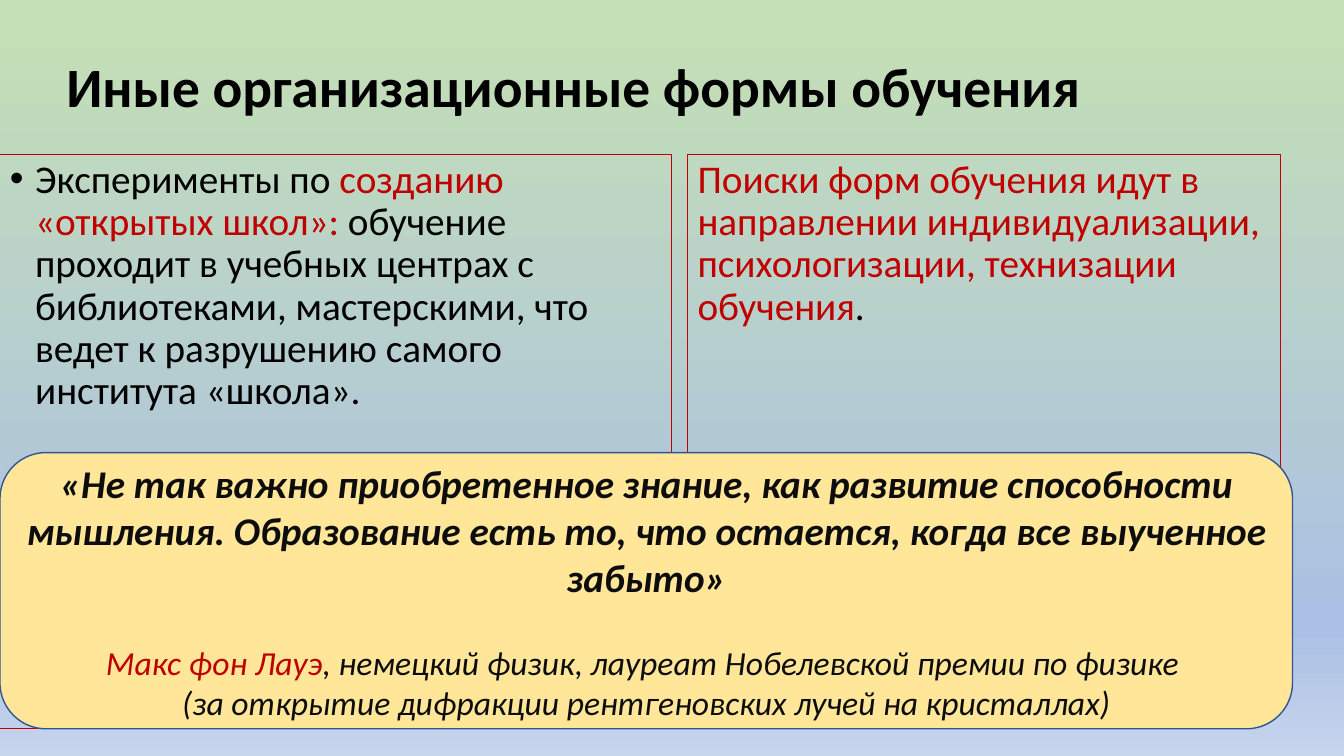
from dataclasses import dataclass

from lxml.etree import SubElement
from pptx import Presentation
from pptx.dml.color import RGBColor
from pptx.enum.shapes import MSO_SHAPE
from pptx.enum.text import MSO_ANCHOR, PP_ALIGN
from pptx.oxml.ns import qn
from pptx.util import Inches, Pt

COLORS = {
    "black": "000000",
    "ink": "0D0D0D",
    "red": "C00000",
    "yellow": "FFE699",
    "blue": "325491",
    "sky_top": "C5E0B4",
    "sky_low": "ABC0E4",
    "sky_bottom": "C7D5ED",
}
SKY = ((0, "sky_top"), (83, "sky_low"), (100, "sky_bottom"))
FONT = "Calibri"
SLIDE_WIDTH, SLIDE_HEIGHT = Inches(13.33), Inches(7.5)


@dataclass(frozen=True)
class Run:
    text: str
    color: str


@dataclass(frozen=True)
class Line:
    runs: tuple[Run, ...]
    size: float
    bold: bool = False
    italic: bool = False
    bullet: bool = False
    align: PP_ALIGN = PP_ALIGN.LEFT
    spacing: float = 0.9
    before: float = 0


@dataclass(frozen=True)
class Panel:
    left: float
    top: float
    width: float
    height: float
    lines: tuple[Line, ...]
    preset: MSO_SHAPE = MSO_SHAPE.RECTANGLE
    fill: str | None = None
    border: str | None = None
    border_width: float = 0.75
    anchor: MSO_ANCHOR = MSO_ANCHOR.TOP


def quote_line(*runs: Run, size: float = 24, bold: bool = False, before: float = 0) -> Line:
    return Line(runs, size, bold, True, align=PP_ALIGN.CENTER, spacing=1, before=before)


PANELS = (
    Panel(4.2, 7.47, 86.12, 8.67,
          (Line((Run("Иные организационные формы обучения", "black"),), 39.6, bold=True),),
          anchor=MSO_ANCHOR.MIDDLE),
    Panel(0, 20.4, 49.96, 76,
          (Line((Run("Эксперименты по ", "black"),
                 Run("созданию «открытых школ»: ", "red"),
                 Run("обучение проходит в учебных центрах с библиотеками, мастерскими, "
                     "что ведет к разрушению самого института «школа».", "black")),
                28, bullet=True),),
          border="red"),
    Panel(51.16, 20.4, 44.11, 73.2,
          (Line((Run("Поиски форм обучения идут в направлении индивидуализации, "
                     "психологизации, технизации обучения", "red"),
                 Run(".", "black")), 28),),
          border="red"),
    Panel(0, 59.87, 96.17, 36.53,
          (quote_line(Run("«Не так важно приобретенное знание, как развитие способности мышления. "
                          "Образование есть то, что остается, когда все выученное забыто»", "ink"),
                      size=28, bold=True),
           quote_line(Run("Макс фон Лауэ", "red"),
                      Run(", немецкий физик, лауреат Нобелевской премии по физике ", "ink"),
                      before=29.3),
           quote_line(Run("(за открытие дифракции рентгеновских лучей на кристаллах)", "ink"))),
          MSO_SHAPE.ROUNDED_RECTANGLE, "yellow", "blue", 1, MSO_ANCHOR.MIDDLE),
)


def rgb(name: str) -> RGBColor:
    return RGBColor.from_string(COLORS[name])


def paint_background(slide) -> None:
    fill = slide.background.fill
    fill.gradient()
    fill.gradient_angle = 270
    stops = next(slide.background._cSld.iter(qn("a:gsLst")))
    for stop in list(stops):
        stops.remove(stop)
    for percent, color in SKY:
        stop = SubElement(stops, qn("a:gs"), pos=str(percent * 1000))
        SubElement(stop, qn("a:srgbClr"), val=COLORS[color])


def write_line(paragraph, line: Line) -> None:
    paragraph.alignment = line.align
    paragraph.line_spacing = line.spacing
    paragraph.space_before = Pt(line.before)
    font = paragraph.font
    font.name, font.size = FONT, Pt(line.size)
    font.bold, font.italic = line.bold, line.italic
    if line.bullet:
        properties = paragraph._p.get_or_add_pPr()
        properties.set("marL", str(Inches(0.25)))
        properties.set("indent", str(-Inches(0.25)))
        bullet_font = properties.makeelement(qn("a:buFont"), {"typeface": "Arial"})
        bullet = properties.makeelement(qn("a:buChar"), {"char": "•"})
        default_run = properties.find(qn("a:defRPr"))
        default_run.addprevious(bullet_font)
        default_run.addprevious(bullet)
    for part in line.runs:
        run = paragraph.add_run()
        run.text = part.text
        run.font.color.rgb = rgb(part.color)


def draw_panel(slide, panel: Panel) -> None:
    box = (int(SLIDE_WIDTH * panel.left / 100), int(SLIDE_HEIGHT * panel.top / 100),
           int(SLIDE_WIDTH * panel.width / 100), int(SLIDE_HEIGHT * panel.height / 100))
    if panel.border:
        shape = slide.shapes.add_shape(panel.preset, *box)
        shape.shadow.inherit = False
        shape.line.color.rgb = rgb(panel.border)
        shape.line.width = Pt(panel.border_width)
        if panel.fill:
            shape.fill.solid()
            shape.fill.fore_color.rgb = rgb(panel.fill)
        else:
            shape.fill.background()
    else:
        shape = slide.shapes.add_textbox(*box)
    frame = shape.text_frame
    frame.word_wrap = True
    frame.vertical_anchor = panel.anchor
    for index, line in enumerate(panel.lines):
        write_line(frame.add_paragraph() if index else frame.paragraphs[0], line)


def main() -> None:
    presentation = Presentation()
    presentation.slide_width, presentation.slide_height = SLIDE_WIDTH, SLIDE_HEIGHT
    slide = presentation.slides.add_slide(presentation.slide_layouts[6])
    paint_background(slide)
    for panel in PANELS:
        draw_panel(slide, panel)
    presentation.save("out.pptx")


if __name__ == "__main__":
    main()
